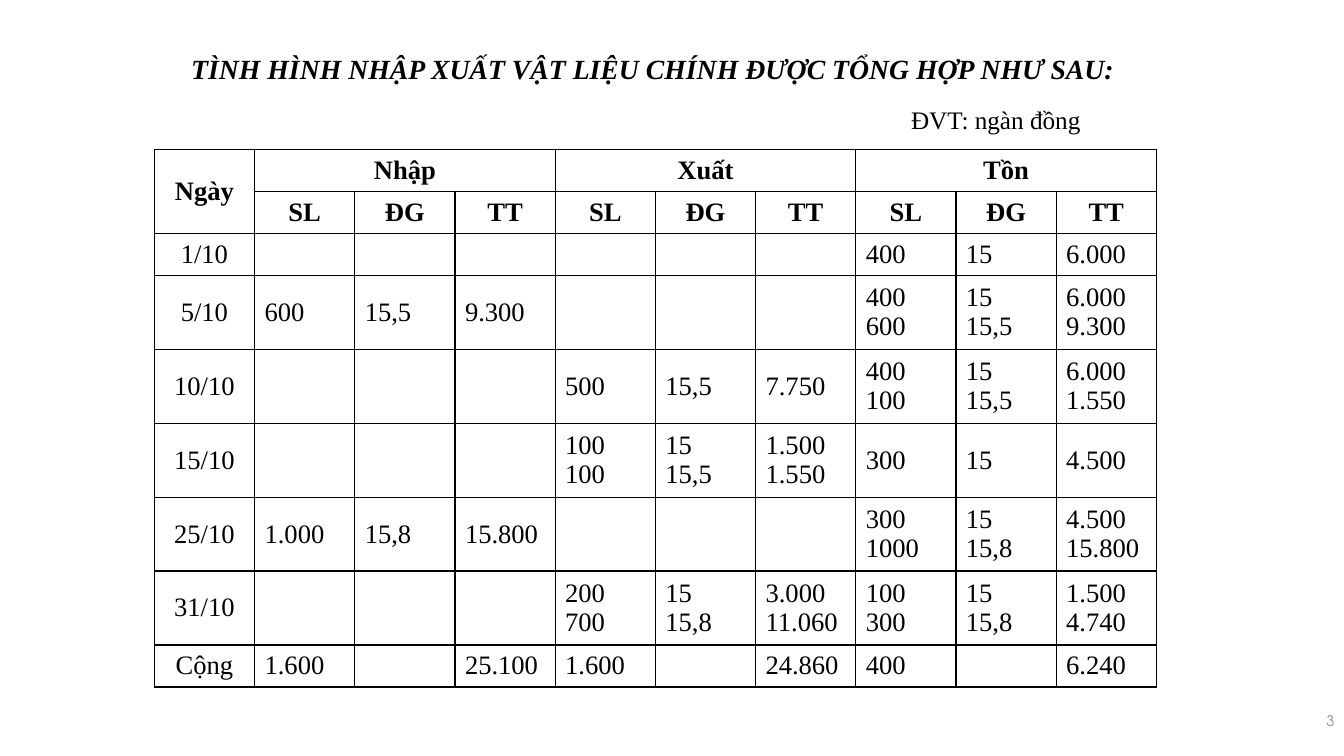
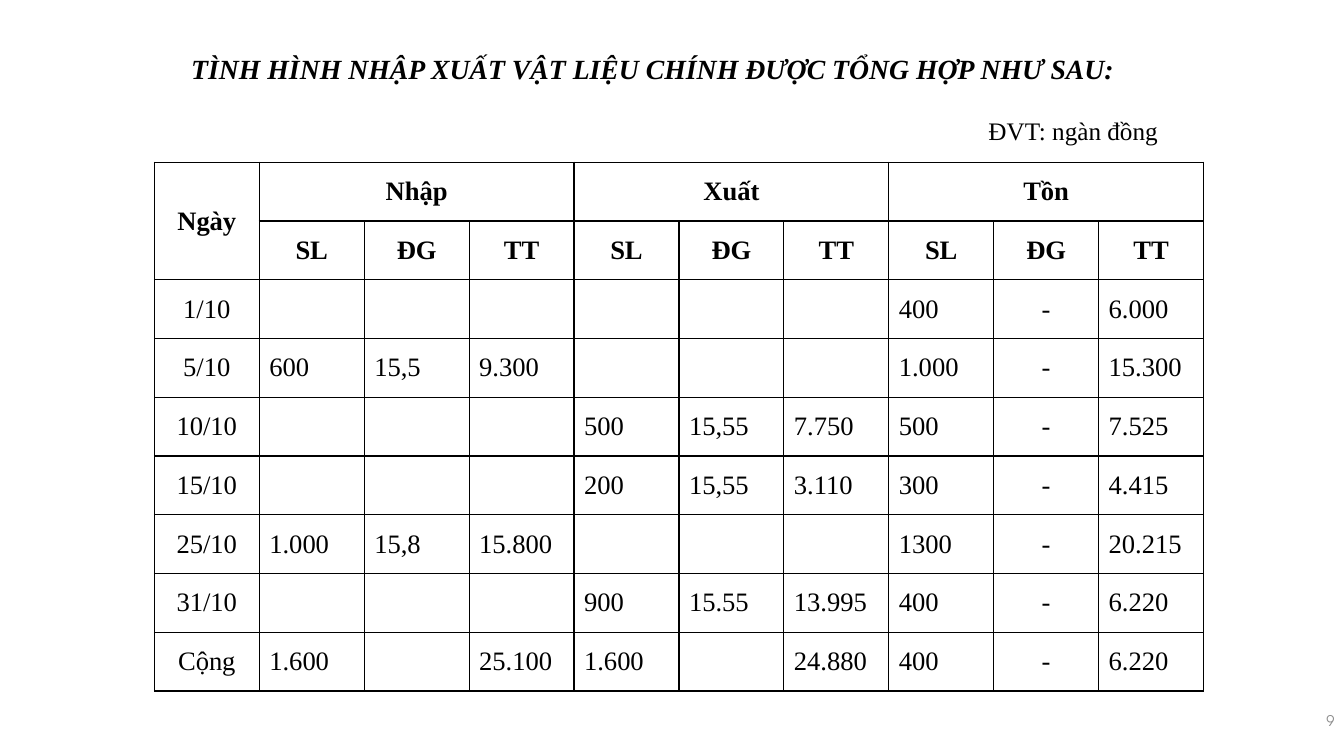
from lxml import etree
from pptx import Presentation
from pptx.dml.color import RGBColor
from pptx.enum.text import MSO_ANCHOR as Anchor, PP_ALIGN as Align
from pptx.oxml.ns import qn
from pptx.util import Cm, Pt

COLORS = {"text": "000000", "paper": "FFFFFF", "border": "000000", "number": "8C8C8C"}
SERIF = "Times New Roman"
SANS = "TeX Gyre Adventor"
TITLE = "TÌNH HÌNH NHẬP XUẤT VẬT LIỆU CHÍNH ĐƯỢC TỔNG HỢP NHƯ SAU:"
UNIT = "ĐVT: ngàn đồng"

# "|" separates cells, a space separates the lines inside a cell
HEADER = [
    "Ngày|Nhập|||Xuất|||Tồn||",
    "|SL|ĐG|TT|SL|ĐG|TT|SL|ĐG|TT",
]
BATCH_ROWS = [
    "1/10|||||||400|15|6.000",
    "5/10|600|15,5|9.300||||400 600|15 15,5|6.000 9.300",
    "10/10||||500|15,5|7.750|400 100|15 15,5|6.000 1.550",
    "15/10||||100 100|15 15,5|1.500 1.550|300|15|4.500",
    "25/10|1.000|15,8|15.800||||300 1000|15 15,8|4.500 15.800",
    "31/10||||200 700|15 15,8|3.000 11.060|100 300|15 15,8|1.500 4.740",
    "Cộng|1.600||25.100|1.600||24.860|400||6.240",
]
AVERAGE_ROWS = [
    "1/10|||||||400|-|6.000",
    "5/10|600|15,5|9.300||||1.000|-|15.300",
    "10/10||||500|15,55|7.750|500|-|7.525",
    "15/10||||200|15,55|3.110|300|-|4.415",
    "25/10|1.000|15,8|15.800||||1300|-|20.215",
    "31/10||||900|15.55|13.995|400|-|6.220",
    "Cộng|1.600||25.100|1.600||24.880|400|-|6.220",
]


def write(text_frame, text, size=19, font=SERIF, color="text", bold=False,
          italic=False, align=Align.LEFT):
    text_frame.text = text
    for paragraph in text_frame.paragraphs:
        paragraph.alignment = align
        for run in paragraph.runs:
            run.font.size = Pt(size)
            run.font.name = font
            run.font.bold = bold
            run.font.italic = italic
            run.font.color.rgb = RGBColor.from_string(COLORS[color])


def add_borders(cell, width=Pt(1)):
    properties = cell._tc.get_or_add_tcPr()
    for index, side in enumerate(("lnL", "lnR", "lnT", "lnB")):
        line = etree.Element(qn(f"a:{side}"), w=str(int(width)))
        fill = etree.SubElement(line, qn("a:solidFill"))
        etree.SubElement(fill, qn("a:srgbClr"), val=COLORS["border"])
        properties.insert(index, line)


class Deck:
    def __init__(self):
        self.presentation = Presentation()
        self.presentation.slide_width = Cm(33.87)
        self.presentation.slide_height = Cm(19.05)
        self.slide = None

    def add_slide(self, number):
        layout = self.presentation.slide_layouts.get_by_name("Title Only")
        self.slide = self.presentation.slides.add_slide(layout)
        title = self.slide.shapes.title
        title.left, title.top = Cm(2.41), Cm(0.79)
        title.width, title.height = Cm(25.91), Cm(1.88)
        title.text_frame.vertical_anchor = Anchor.MIDDLE
        write(title.text_frame, TITLE, size=19.8, bold=True, italic=True,
              align=Align.RIGHT)
        self.add_text(str(number), 31.75, 17.65, 2.13, anchor=Anchor.MIDDLE,
                      size=10.5, font=SANS, color="number", align=Align.RIGHT)

    def add_text(self, text, left, top, width, anchor=Anchor.TOP, **text_format):
        box = self.slide.shapes.add_textbox(Cm(left), Cm(top), Cm(width), Cm(1.02))
        box.text_frame.word_wrap = True
        box.text_frame.vertical_anchor = anchor
        write(box.text_frame, text, **text_format)

    def add_unit(self, left, top):
        self.add_text(UNIT, left, top, 5.61, size=18)

    def add_ledger(self, rows, top, width, row_height, extra_line=0.7):
        """Draw the stock table; each further line in a row adds extra_line."""
        grid = [row.split("|") for row in HEADER + rows]
        heights = [row_height + extra_line * max(text.count(" ") for text in row)
                   for row in grid]
        frame = self.slide.shapes.add_table(
            len(grid), len(grid[0]), Cm(3.89), Cm(top), Cm(width), Cm(sum(heights)))
        table = frame.table
        table.first_row = table.horz_banding = False
        for row_index, row in enumerate(grid):
            table.rows[row_index].height = Cm(heights[row_index])
            is_header = row_index < len(HEADER)
            for column_index, text in enumerate(row):
                cell = table.cell(row_index, column_index)
                cell.vertical_anchor = Anchor.MIDDLE
                cell.fill.solid()
                cell.fill.fore_color.rgb = RGBColor.from_string(COLORS["paper"])
                add_borders(cell)
                centred = is_header or column_index == 0 or text == "-"
                write(cell.text_frame, text.replace(" ", "\n"), bold=is_header,
                      align=Align.CENTER if centred else Align.LEFT)
        table.cell(0, 0).merge(table.cell(1, 0))
        for first in (1, 4, 7):
            table.cell(0, first).merge(table.cell(0, first + 2))


def main():
    deck = Deck()

    deck.add_slide(3)
    deck.add_ledger(BATCH_ROWS, top=3.76, width=25.25, row_height=1.04)
    deck.add_unit(22.71, 2.51)

    deck.add_slide(9)
    deck.add_ledger(AVERAGE_ROWS, top=4.09, width=26.44, row_height=1.48)
    deck.add_unit(24.66, 2.77)

    deck.presentation.save("out.pptx")


if __name__ == "__main__":
    main()
